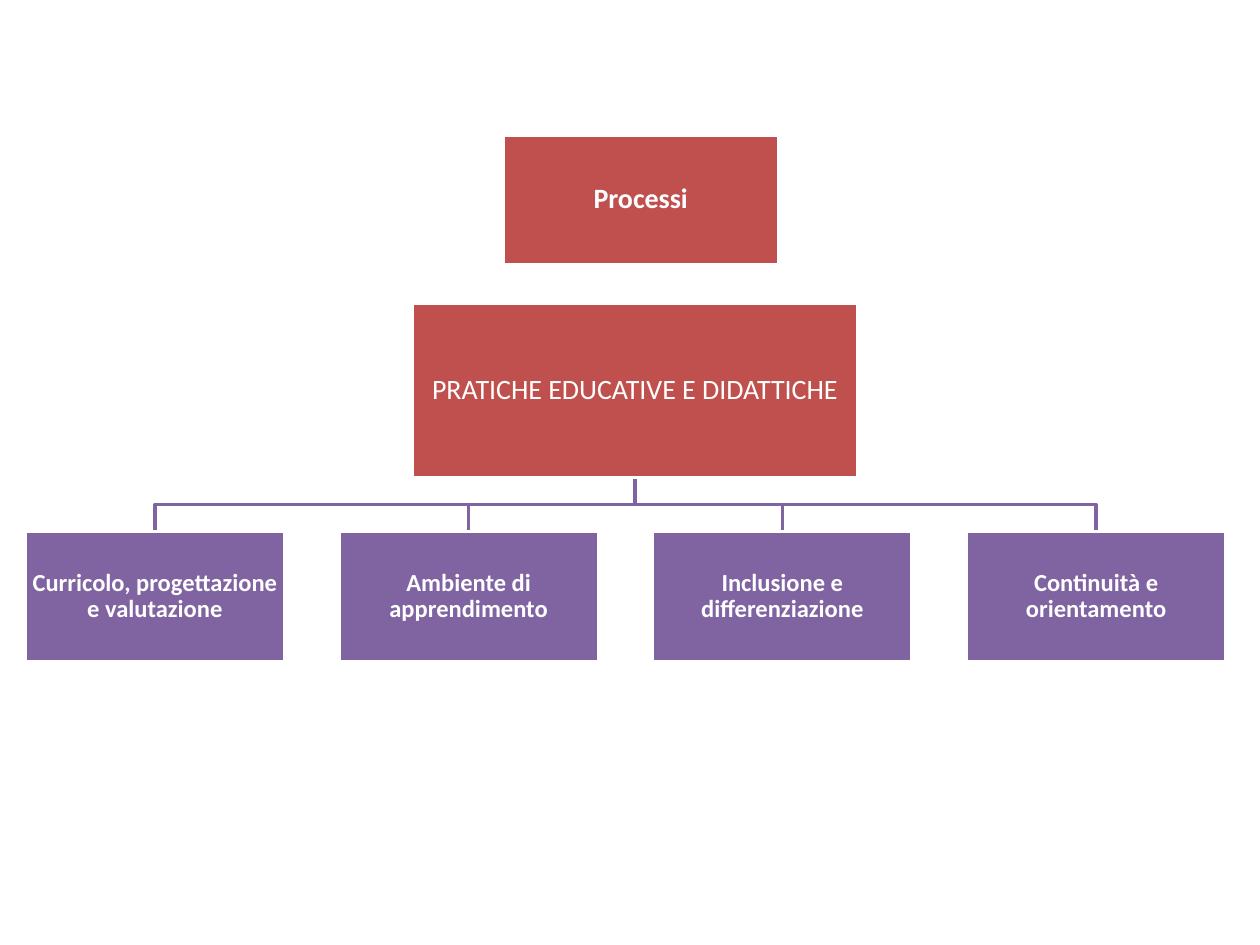
import pptx
import pptx.dml.color
import pptx.enum.shapes
import pptx.enum.text
import pptx.util

RED = pptx.dml.color.RGBColor(0xC0, 0x50, 0x4D)
PURPLE = pptx.dml.color.RGBColor(0x80, 0x64, 0xA2)
WHITE = pptx.dml.color.RGBColor(0xFF, 0xFF, 0xFF)

# Content: text, bold, and (left, top, width, height) in inches
HEADING = ("Processi", True, (3.99, 1.07, 2.19, 1.03))
PARENT = ("PRATICHE EDUCATIVE E DIDATTICHE", False, (3.27, 2.41, 3.54, 1.38))
AREAS = [
    "Curricolo, progettazione e valutazione",
    "Ambiente di apprendimento",
    "Inclusione e differenziazione",
    "Continuità e orientamento",
]

# Row of areas
ROW_LEFT, ROW_TOP, PITCH = 0.2, 4.22, 2.49
AREA_WIDTH, AREA_HEIGHT = 2.06, 1.03


def add_box(slide, text, bold, place, color, size):
    box = slide.shapes.add_shape(
        pptx.enum.shapes.MSO_SHAPE.RECTANGLE, *map(pptx.util.Inches, place))
    box.shadow.inherit = False
    box.fill.solid()
    box.fill.fore_color.rgb = color
    box.line.color.rgb = WHITE
    box.line.width = pptx.util.Pt(2)
    frame = box.text_frame
    frame.word_wrap = True
    frame.vertical_anchor = pptx.enum.text.MSO_ANCHOR.MIDDLE
    frame.margin_left = frame.margin_right = pptx.util.Inches(0.01)
    frame.margin_top = frame.margin_bottom = pptx.util.Inches(0.01)
    para = frame.paragraphs[0]
    para.alignment = pptx.enum.text.PP_ALIGN.CENTER
    para.line_spacing = 0.9
    span = para.add_run()
    span.text = text
    span.font.name = "Calibri"
    span.font.size = pptx.util.Pt(size)
    span.font.bold = bold
    span.font.color.rgb = WHITE


def add_branch(slide, points):
    start, *rest = [tuple(map(pptx.util.Inches, point)) for point in points]
    builder = slide.shapes.build_freeform(*start)
    builder.add_line_segments(rest, close=False)
    branch = builder.convert_to_shape()
    branch.shadow.inherit = False
    branch.fill.background()
    branch.line.color.rgb = PURPLE
    branch.line.width = pptx.util.Pt(2)


def main():
    deck = pptx.Presentation()
    deck.slide_width = pptx.util.Inches(10)
    deck.slide_height = pptx.util.Inches(7.5)
    page = deck.slides.add_slide(deck.slide_layouts[6])

    places = [(ROW_LEFT + column * PITCH, ROW_TOP, AREA_WIDTH, AREA_HEIGHT)
              for column in range(len(AREAS))]

    # Branches from the parent down to each area, behind the boxes
    left, top, width, height = PARENT[2]
    trunk, bottom = left + width / 2, top + height
    middle = (bottom + ROW_TOP) / 2
    for place in places:
        center = place[0] + AREA_WIDTH / 2
        add_branch(page, [(trunk, bottom), (trunk, middle),
                          (center, middle), (center, ROW_TOP)])

    # Boxes
    for text, bold, place in (HEADING, PARENT):
        add_box(page, text, bold, place, RED, 16)
    for text, place in zip(AREAS, places):
        add_box(page, text, True, place, PURPLE, 14)

    deck.save("out.pptx")


if __name__ == "__main__":
    main()
